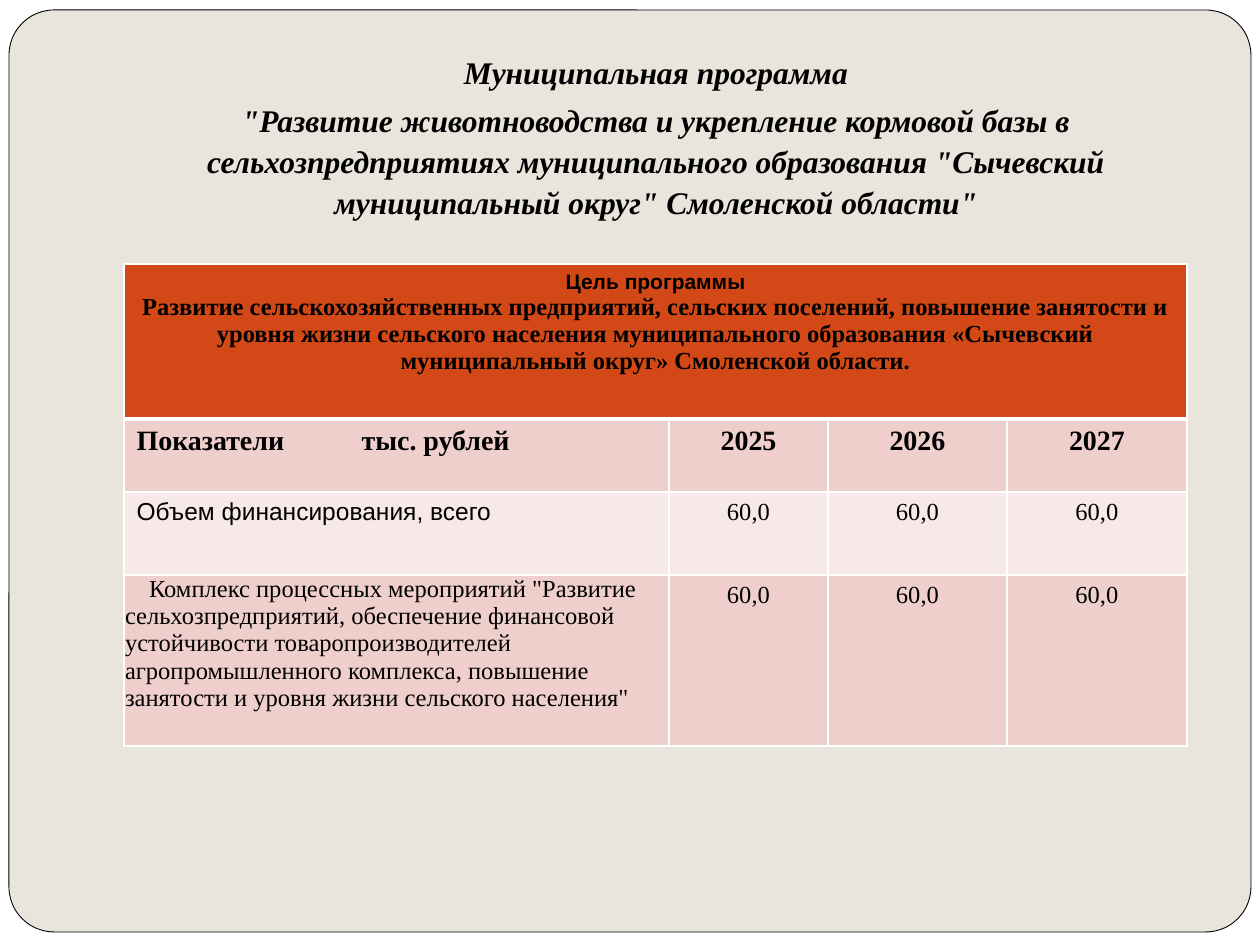
from lxml.etree import SubElement
from pptx import Presentation
from pptx.dml.color import RGBColor
from pptx.enum.shapes import MSO_SHAPE as Shape
from pptx.enum.text import MSO_ANCHOR as Anchor, PP_ALIGN as Align
from pptx.oxml.ns import qn
from pptx.util import Pt

EMU_PER_PX = 914400 / 126
COLORS = {
    "white": "FFFFFF", "black": "000000", "page": "E9E5DC",
    "header": "D34817", "band_dark": "EFCFCC", "band_light": "F7E9E8",
}
SERIF, SANS = "Times New Roman", "Arial"
TITLE = {"size": 18, "bold": True, "italic": True}
HEAD = {"size": 16, "bold": True}
BODY = {"size": 14}


def px(n):
    return round(n * EMU_PER_PX)


def rgb(name):
    return RGBColor.from_string(COLORS[name])


class SlideBuilder:
    def __init__(self, prs):
        self.s = prs.slides.add_slide(prs.slide_layouts[6])
        bg = self.s.background.fill
        bg.solid()
        bg.fore_color.rgb = rgb("page")

    def panel(self, kind, box, fill, line=None, radius=None):
        sp = self.s.shapes.add_shape(kind, *map(px, box))
        sp.shadow.inherit = False
        sp.fill.solid()
        sp.fill.fore_color.rgb = rgb(fill)
        if line:
            sp.line.color.rgb = rgb(line)
            sp.line.width = Pt(0.5)
        else:
            sp.line.fill.background()
        if radius:
            sp.adjustments[0] = radius

    def add_text(self, p, text, align=Align.CENTER, font=SERIF, **style):
        p.alignment = align
        r = p.add_run()
        r.text = text
        values = {"name": font, "bold": False, "italic": False, **style}
        values["size"] = Pt(values["size"])
        for key, value in values.items():
            setattr(r.font, key, value)
        r.font.color.rgb = rgb("black")

    def title(self, box, lines):
        tf = self.s.shapes.add_textbox(*map(px, box)).text_frame
        tf.word_wrap = True
        tf.vertical_anchor = Anchor.BOTTOM
        tf.margin_bottom = px(13)
        for i, line in enumerate(lines):
            p = tf.add_paragraph() if i else tf.paragraphs[0]
            p.line_spacing = 1.09
            p.space_before = Pt(4 if i else 0)
            self.add_text(p, line, **TITLE)

    def table(self, left, top, cols, rows):
        table = self.s.shapes.add_table(
            len(rows), len(cols), px(left), px(top), px(sum(cols)), px(sum(rows))).table
        for col, width in zip(table.columns, cols):
            col.width = px(width)
        for row, height in zip(table.rows, rows):
            row.height = px(height)
        return table

    def borders(self, cell, bottom=1):
        """White cell edges; they must stand before the fill in the cell's XML."""
        tc_pr = cell._tc.get_or_add_tcPr()
        for side, width in {"L": 1, "R": 1, "T": 1, "B": bottom}.items():
            ln = SubElement(tc_pr, qn(f"a:ln{side}"), w=str(Pt(width)))
            fill = SubElement(ln, qn("a:solidFill"))
            SubElement(fill, qn("a:srgbClr"), val=COLORS["white"])

    def cell(self, cell, fill, *lines, bottom=1):
        """Fill a cell; each line is a (text, style) pair."""
        self.borders(cell, bottom)
        cell.fill.solid()
        cell.fill.fore_color.rgb = rgb(fill)
        tf = cell.text_frame
        for i, (text, style) in enumerate(lines):
            p = tf.add_paragraph() if i else tf.paragraphs[0]
            self.add_text(p, text, **style)


def main():
    prs = Presentation()
    prs.slide_width, prs.slide_height = px(1260), px(945)
    b = SlideBuilder(prs)
    b.panel(Shape.RECTANGLE, (0, 0, 1260, 945), "white")
    b.panel(Shape.ROUNDED_RECTANGLE, (9, 10, 1242, 922), "page", "black", 0.049)
    b.title((115, 38, 1082, 196), [
        "Муниципальная программа",
        "\"Развитие животноводства и укрепление кормовой базы в сельхозпредприятиях "
        "муниципального образования \"Сычевский муниципальный округ\" Смоленской области\"",
    ])

    table = b.table(124, 264, (545, 159, 179, 180), (155, 73, 83, 171))
    goal = table.cell(0, 0)
    goal.merge(table.cell(0, 3))
    b.cell(goal, "header",
           ("Цель программы", {"size": 12, "bold": True, "font": SANS}),
           ("Развитие сельскохозяйственных предприятий, сельских поселений, повышение "
            "занятости и уровня жизни сельского населения муниципального образования "
            "«Сычевский муниципальный округ» Смоленской области.", {"size": 14, "bold": True}),
           bottom=3)
    for col in range(1, 4):
        b.borders(table.cell(0, col), bottom=3)

    rows = [
        ("band_dark", "Показатели\tтыс. рублей", HEAD, ("2025", "2026", "2027"), HEAD),
        ("band_light", "Объем финансирования, всего", {**BODY, "font": SANS}, ["60,0"] * 3, BODY),
        ("band_dark", "Комплекс процессных мероприятий \"Развитие сельхозпредприятий, "
         "обеспечение финансовой устойчивости товаропроизводителей агропромышленного "
         "комплекса, повышение занятости и уровня жизни сельского населения\"",
         BODY, ["60,0"] * 3, BODY),
    ]
    for i, (fill, label, label_style, values, value_style) in enumerate(rows, 1):
        b.cell(table.cell(i, 0), fill, (label, {**label_style, "align": Align.LEFT}))
        for j, value in enumerate(values, 1):
            b.cell(table.cell(i, j), fill, (value, value_style))

    unit_ppr = table.cell(1, 0).text_frame.paragraphs[0]._p.get_or_add_pPr()
    tabs = SubElement(unit_ppr, qn("a:tabLst"))
    SubElement(tabs, qn("a:tab"), pos=str(px(225)), algn="l")

    measures = table.cell(3, 0)
    for side, margin in {"left": 1, "right": 1, "top": 1, "bottom": 0}.items():
        setattr(measures, f"margin_{side}", px(margin))
    measures.text_frame.paragraphs[0]._p.get_or_add_pPr().set("indent", str(px(24)))
    prs.save("out.pptx")


if __name__ == "__main__":
    main()
